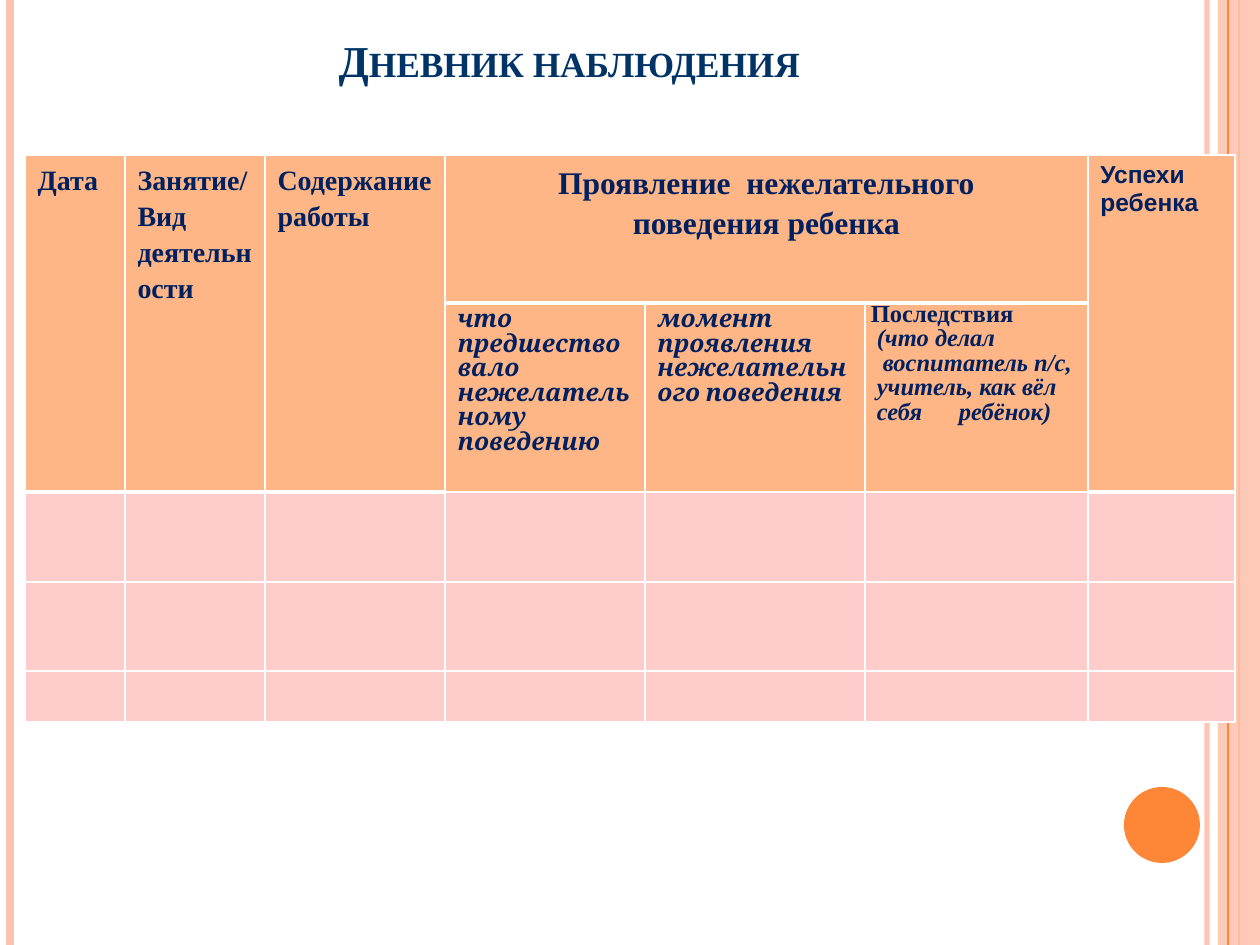
from lxml import etree
from pptx import Presentation
from pptx.dml.color import RGBColor
from pptx.enum.shapes import MSO_CONNECTOR, MSO_SHAPE
from pptx.enum.text import MSO_ANCHOR, PP_ALIGN
from pptx.oxml.ns import qn
from pptx.util import Emu, Pt

STRAIGHT = MSO_CONNECTOR.STRAIGHT
RECTANGLE, OVAL = MSO_SHAPE.RECTANGLE, MSO_SHAPE.OVAL
BOTTOM = MSO_ANCHOR.BOTTOM
LEFT, CENTER = PP_ALIGN.LEFT, PP_ALIGN.CENTER

WHITE = RGBColor(0xFF, 0xFF, 0xFF)
PEACH = RGBColor(0xFE, 0xC3, 0xAE)
ORANGE = RGBColor(0xFE, 0x86, 0x37)
HEADER_FILL = RGBColor(0xFE, 0xB6, 0x87)
BODY_FILL = RGBColor(0xFF, 0xCC, 0xCC)
TITLE_BLUE = RGBColor(0x00, 0x33, 0x66)
NAVY = RGBColor(0x00, 0x20, 0x60)

SERIF, SANS, CAMBRIA = "Times New Roman", "Arial", "Cambria"
COLUMNS = [100, 140, 180, 200, 220, 223, 147]
ROWS = [148, 189, 90, 89, 51]
TALL_COLUMNS = (0, 1, 2, 6)


def px(length):
    """Turn px at 126 to the inch into EMU."""
    return Emu(round(length * 914400 / 126))


def set_alpha(fill_parent, percent):
    """Make the solid colour under an element partly transparent."""
    color = fill_parent.find(".//" + qn("a:srgbClr"))
    etree.SubElement(color, qn("a:alpha"), val=str(percent * 1000))


def add_rule(slide, x, height, color, width, alpha=100):
    """Draw a vertical line down the slide."""
    rule = slide.shapes.add_connector(STRAIGHT, px(x), 0, px(x), px(height))
    rule.line.color.rgb = color
    rule.line.width = Pt(width)
    properties = rule._element.spPr
    etree.SubElement(properties, qn("a:effectLst"))
    if alpha < 100:
        set_alpha(properties, alpha)


def add_filled_shape(slide, kind, box, color):
    """Add a plain shape without outline or shadow."""
    shape = slide.shapes.add_shape(kind, *map(px, box))
    shape.shadow.inherit = False
    shape.fill.solid()
    shape.fill.fore_color.rgb = color
    shape.line.fill.background()
    return shape


def add_frame(slide, width, height):
    """Draw the edge stripes and the orange disc."""
    add_rule(slide, width - 53, height, PEACH, 3, 93)
    add_rule(slide, 10, height, PEACH, 4.5)
    add_rule(slide, width - 21, height, ORANGE, 1.5)
    band = add_filled_shape(slide, RECTANGLE, (width - 42, 0, 42, height), PEACH)
    set_alpha(band._element.spPr, 87)
    add_rule(slide, width - 32, height, ORANGE, 0.75)
    add_filled_shape(slide, OVAL, (width - 136, height - 158, 76, 76), ORANGE)


def add_run(paragraph, text, size, font, color, italic=False):
    """Add one bold run."""
    run = paragraph.add_run()
    run.text = text
    run.font.size = Pt(size)
    run.font.name = font
    run.font.bold = True
    run.font.italic = italic
    run.font.color.rgb = color
    return run


def add_title(slide, left, top, width, height):
    """Place the title in small capitals."""
    frame = slide.shapes.add_textbox(*map(px, (left, top, width, height))).text_frame
    frame.word_wrap = True
    frame.vertical_anchor = BOTTOM
    frame.margin_bottom = px(61)
    frame.margin_right = px(21)
    paragraph = frame.paragraphs[0]
    paragraph.alignment = CENTER
    run = add_run(paragraph, "Дневник наблюдения", 25.2, SERIF, TITLE_BLUE)
    run._r.get_or_add_rPr().set("cap", "small")


def style_cell(cell, color, top, bottom):
    """Give a cell its fill and white borders."""
    properties = cell._tc.get_or_add_tcPr()
    for side, width in (("L", 1), ("R", 1), ("T", top), ("B", bottom)):
        if width:
            line = etree.SubElement(properties, qn("a:ln" + side), w=str(Pt(width)))
            fill = etree.SubElement(line, qn("a:solidFill"))
            etree.SubElement(fill, qn("a:srgbClr"), val=str(WHITE))
    cell.fill.solid()
    cell.fill.fore_color.rgb = color


def write_cell(cell, lines, size, font, spacing, align=LEFT, italic=False):
    """Write one paragraph per line and return the paragraphs."""
    frame = cell.text_frame
    for index, text in enumerate(lines):
        paragraph = frame.add_paragraph() if index else frame.paragraphs[0]
        paragraph.alignment = align
        paragraph.line_spacing = spacing
        add_run(paragraph, text, size, font, NAVY, italic)
    return frame.paragraphs


def write_consequences(cell):
    """Write the stepped lines of the consequences heading."""
    cell.margin_left = cell.margin_right = cell.margin_top = cell.margin_bottom = 0
    lines = ["Последствия", "(что делал", "воспитатель п/с,",
             "учитель, как вёл", "себя\tребёнок)"]
    paragraphs = write_cell(cell, lines, 14, SERIF, Pt(14), italic=True)
    paragraphs[0].runs[0].font.italic = False
    for paragraph, indent in zip(paragraphs, (6, 12, 18, 12, 12)):
        paragraph._p.get_or_add_pPr().set("marL", str(px(indent)))
    tabs = etree.SubElement(paragraphs[-1]._p.get_or_add_pPr(), qn("a:tabLst"))
    etree.SubElement(tabs, qn("a:tab"), pos=str(px(82)), algn="l")


def add_diary(slide, left, top):
    """Build the observation table with its two-level heading."""
    frame = slide.shapes.add_table(len(ROWS), len(COLUMNS), px(left), px(top),
                                   px(sum(COLUMNS)), px(sum(ROWS)))
    table = frame.table
    table.first_row = table.horz_banding = False
    for column, width in zip(table.columns, COLUMNS):
        column.width = px(width)
    for row, height in zip(table.rows, ROWS):
        row.height = px(height)
    for row in range(len(ROWS)):
        for column in range(len(COLUMNS)):
            thick = row == 0 or (row == 1 and column in TALL_COLUMNS)
            style_cell(table.cell(row, column), HEADER_FILL if row < 2 else BODY_FILL,
                       1 if row == 0 else 0, 3 if thick else 1)
    for column in TALL_COLUMNS:
        table.cell(0, column).merge(table.cell(1, column))
    table.cell(0, 3).merge(table.cell(0, 5))

    headings = [["Дата"], ["Занятие/", "Вид деятельности"], ["Содержание работы"]]
    for column, lines in enumerate(headings):
        write_cell(table.cell(0, column), lines, 16, SERIF, 1.15)
    write_cell(table.cell(0, 3), ["Проявление  нежелательного", "поведения ребенка"],
               18, SERIF, 1.15, CENTER)
    write_cell(table.cell(0, 6), ["Успехи ребенка"], 14, SANS, 1.0)
    stages = ["что предшествовало нежелательному поведению",
              "момент проявления нежелательного поведения"]
    for column, text in enumerate(stages, start=3):
        write_cell(table.cell(1, column), [text], 14, CAMBRIA, Pt(14), italic=True)
    write_consequences(table.cell(1, 5))


def main():
    """Build and save the slide."""
    presentation = Presentation()
    presentation.slide_width, presentation.slide_height = px(1260), px(945)
    slide = presentation.slides.add_slide(presentation.slide_layouts[6])
    slide.background.fill.solid()
    slide.background.fill.fore_color.rgb = WHITE
    add_frame(slide, 1260, 945)
    add_title(slide, 59, 29, 1029, 118)
    add_diary(slide, 25, 155)
    presentation.save("out.pptx")


if __name__ == "__main__":
    main()
